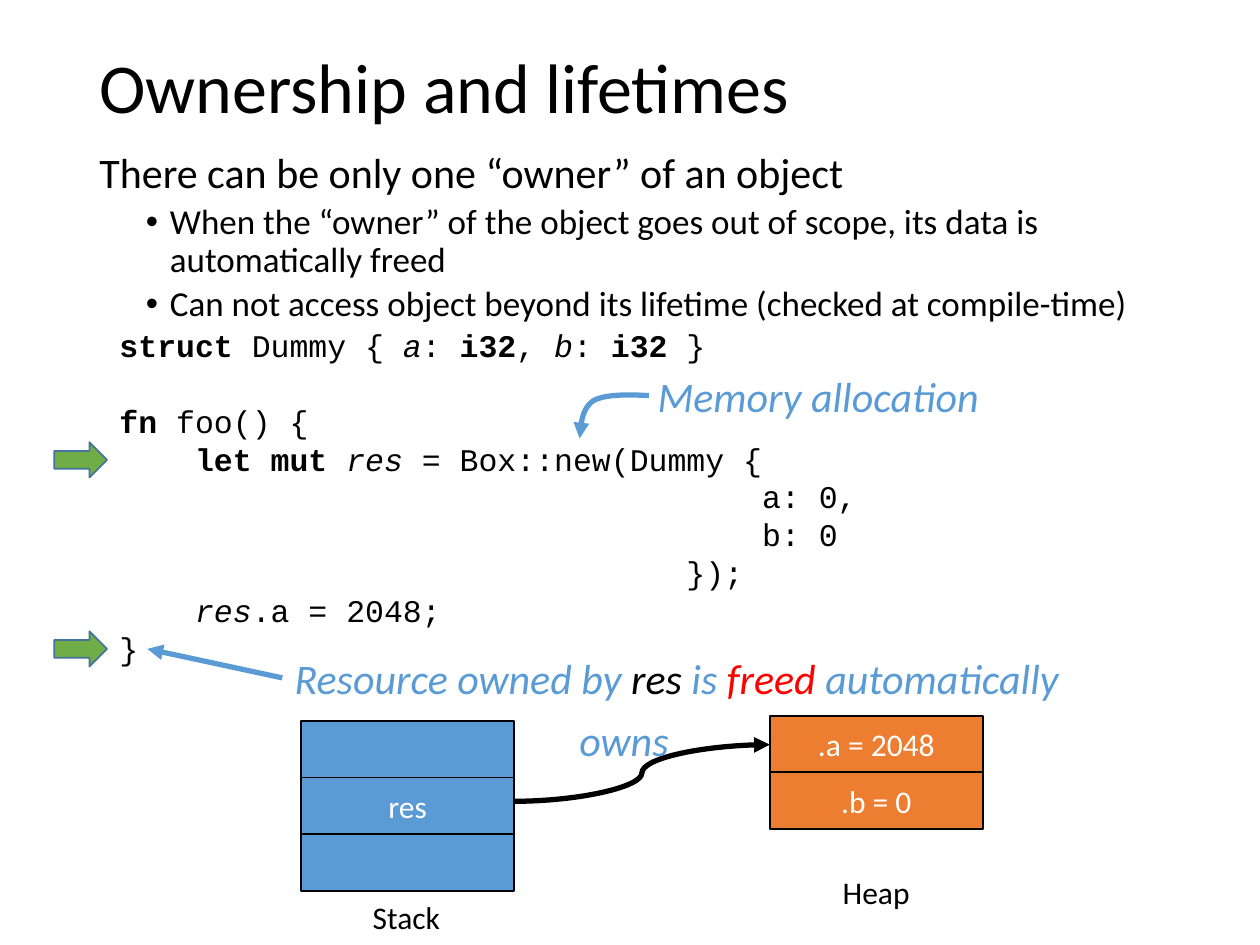
"""Build a slide on ownership and lifetimes, with code, notes and a memory diagram."""
from lxml.etree import SubElement
from pptx import Presentation
from pptx.dml.color import RGBColor
from pptx.enum.shapes import MSO_CONNECTOR, MSO_SHAPE
from pptx.enum.text import MSO_ANCHOR, MSO_AUTO_SIZE, PP_ALIGN
from pptx.oxml.ns import qn
from pptx.util import Pt

PX = 9144
BLACK = RGBColor(0x00, 0x00, 0x00)
WHITE = RGBColor(0xFF, 0xFF, 0xFF)
RED = RGBColor(0xFF, 0x00, 0x00)
BLUE = RGBColor(0x5B, 0x9B, 0xD5)
ORANGE = RGBColor(0xED, 0x7D, 0x31)
GREEN = RGBColor(0x70, 0xAD, 0x47)
GREEN_EDGE = RGBColor(0x43, 0x73, 0x9E)
TEXT_FONT, CODE_FONT = "Calibri", "Courier New"

TITLE = "Ownership and lifetimes"
LEAD = "There can be only one “owner” of an object"
BULLETS = [
    "When the “owner” of the object goes out of scope, its data is automatically freed",
    "Can not access object beyond its lifetime (checked at compile-time)",
]
CODE = [
    [("struct ", "b"), ("Dummy { ", ""), ("a", "i"), (": ", ""), ("i32", "b"),
     (", ", ""), ("b", "i"), (": ", ""), ("i32", "b"), (" }", "")],
    [(" ", "")],
    [("fn ", "b"), ("foo() {", "")],
    [("    ", ""), ("let mut ", "b"), ("res", "i"), (" = Box::new(Dummy {", "")],
    [("                                  a: 0,", "")],
    [("                                  b: 0", "")],
    [("                              });", "")],
    [("    ", ""), ("res", "i"), (".a = 2048;", "")],
    [("}", "")],
]
NOTES = [
    ((512, 289, 278, 50), [("Memory allocation", BLUE)]),
    ((224, 513, 634, 50), [("Resource owned by ", BLUE), ("res", BLACK), (" is ", BLUE),
                           ("freed", RED), (" automatically", BLUE)]),
    ((450, 562, 93, 50), [("owns", BLUE)]),
]
CAPTIONS = [((286, 708, 74, 40), "Stack"), ((659, 688, 74, 40), "Heap")]
MEMORY = [(239, 572, BLUE, ["", "res", ""]), (611, 568, ORANGE, [".a = 2048", ".b = 0"])]
CELL_WIDTH, CELL_HEIGHT = 169, 45
STEP_TOPS = [351, 501]
ALLOCATION_CURVE = [
    [(515, 314), (498, 313), (480, 313), (471, 318)],
    [(471, 318), (462, 324), (461, 336), (460, 348)],
]


def emu(lengths):
    return [length * PX for length in lengths]


def add_span(para, text, size, color, font=TEXT_FONT, style=""):
    span = para.add_run()
    span.text = text
    span.font.name, span.font.size = font, Pt(size)
    span.font.bold, span.font.italic = "b" in style, "i" in style
    span.font.color.rgb = color


def add_box(page, place, wrap):
    box = page.shapes.add_textbox(*emu(place))
    box.text_frame.word_wrap = wrap
    box.text_frame.auto_size = MSO_AUTO_SIZE.NONE if wrap else MSO_AUTO_SIZE.SHAPE_TO_FIT_TEXT
    return box.text_frame


def add_block(page, kind, place, fill, edge):
    block = page.shapes.add_shape(kind, *emu(place))
    block.shadow.inherit = False
    block.fill.solid()
    block.fill.fore_color.rgb = fill
    block.line.color.rgb, block.line.width = edge, Pt(1)
    return block


def style_arrow(arrow, color):
    arrow.line.color.rgb, arrow.line.width = color, Pt(3)
    SubElement(arrow.line._get_or_add_ln(), qn("a:tailEnd"), type="triangle")


def add_connector_arrow(page, kind, begin, end, color):
    arrow = page.shapes.add_connector(kind, *emu(begin + end))
    style_arrow(arrow, color)
    SubElement(arrow._element.spPr, qn("a:effectLst"))


def add_curve_arrow(page, curves, color, steps=12):
    points = []
    for curve in curves:
        for step in range(1, steps + 1):
            t = step / steps
            weights = ((1 - t) ** 3, 3 * t * (1 - t) ** 2, 3 * t * t * (1 - t), t ** 3)
            points.append(tuple(round(sum(w * v for w, v in zip(weights, axis)) * PX)
                                for axis in zip(*curve)))
    builder = page.shapes.build_freeform(*emu(curves[0][0]))
    builder.add_line_segments(points, close=False)
    arrow = builder.convert_to_shape()
    arrow.shadow.inherit = False
    arrow.fill.background()
    style_arrow(arrow, color)


def add_title(page):
    title = page.shapes.title
    title.left, title.top, title.width, title.height = emu((69, 0, 862, 145))
    frame = title.text_frame
    frame.auto_size, frame.vertical_anchor = MSO_AUTO_SIZE.NONE, MSO_ANCHOR.MIDDLE
    para = frame.paragraphs[0]
    para.alignment, para.line_spacing = PP_ALIGN.LEFT, 0.9
    add_span(para, TITLE, 40, BLACK)


def add_points(page):
    frame = add_box(page, (69, 116, 862, 476), True)
    lead = frame.paragraphs[0]
    lead.line_spacing = 0.9
    add_span(lead, LEAD, 24, BLACK)
    for text in BULLETS:
        para = frame.add_paragraph()
        para.level, para.line_spacing, para.space_before = 1, 0.9, Pt(3.8)
        properties = para._p.get_or_add_pPr()
        properties.set("marL", str(56 * PX))
        properties.set("indent", str(-19 * PX))
        SubElement(properties, qn("a:buFont"), typeface="Arial")
        SubElement(properties, qn("a:buChar"), char="•")
        add_span(para, text, 20, BLACK)


def add_code(page):
    frame = add_box(page, (85, 254, 824, 283), True)
    for index, line in enumerate(CODE):
        para = frame.add_paragraph() if index else frame.paragraphs[0]
        for text, style in line:
            add_span(para, text, 18, BLACK, CODE_FONT, style)


def add_memory(page):
    for left, top, fill, labels in MEMORY:
        for row, label in enumerate(labels):
            place = (left, top + row * CELL_HEIGHT, CELL_WIDTH, CELL_HEIGHT)
            cell = add_block(page, MSO_SHAPE.RECTANGLE, place, fill, BLACK)
            if label:
                cell.text_frame.vertical_anchor = MSO_ANCHOR.MIDDLE
                para = cell.text_frame.paragraphs[0]
                para.alignment = PP_ALIGN.CENTER
                add_span(para, label, 18, WHITE)
    for place, text in CAPTIONS:
        add_span(add_box(page, place, False).paragraphs[0], text, 18, BLACK)
    add_connector_arrow(page, MSO_CONNECTOR.CURVE, (408, 636), (611, 591), BLACK)


def add_notes(page):
    for top in STEP_TOPS:
        add_block(page, MSO_SHAPE.RIGHT_ARROW, (43, top, 42, 28), GREEN, GREEN_EDGE)
    for place, spans in NOTES:
        para = add_box(page, place, False).paragraphs[0]
        for text, color in spans:
            add_span(para, text, 24, color, style="i")
    add_curve_arrow(page, ALLOCATION_CURVE, BLUE)
    add_connector_arrow(page, MSO_CONNECTOR.STRAIGHT, (224, 538), (117, 515), BLUE)


def main():
    deck = Presentation()
    deck.slide_width, deck.slide_height = emu((1000, 750))
    page = deck.slides.add_slide(deck.slide_layouts[5])
    add_title(page)
    add_points(page)
    add_code(page)
    add_memory(page)
    add_notes(page)
    deck.save("out.pptx")


if __name__ == "__main__":
    main()
